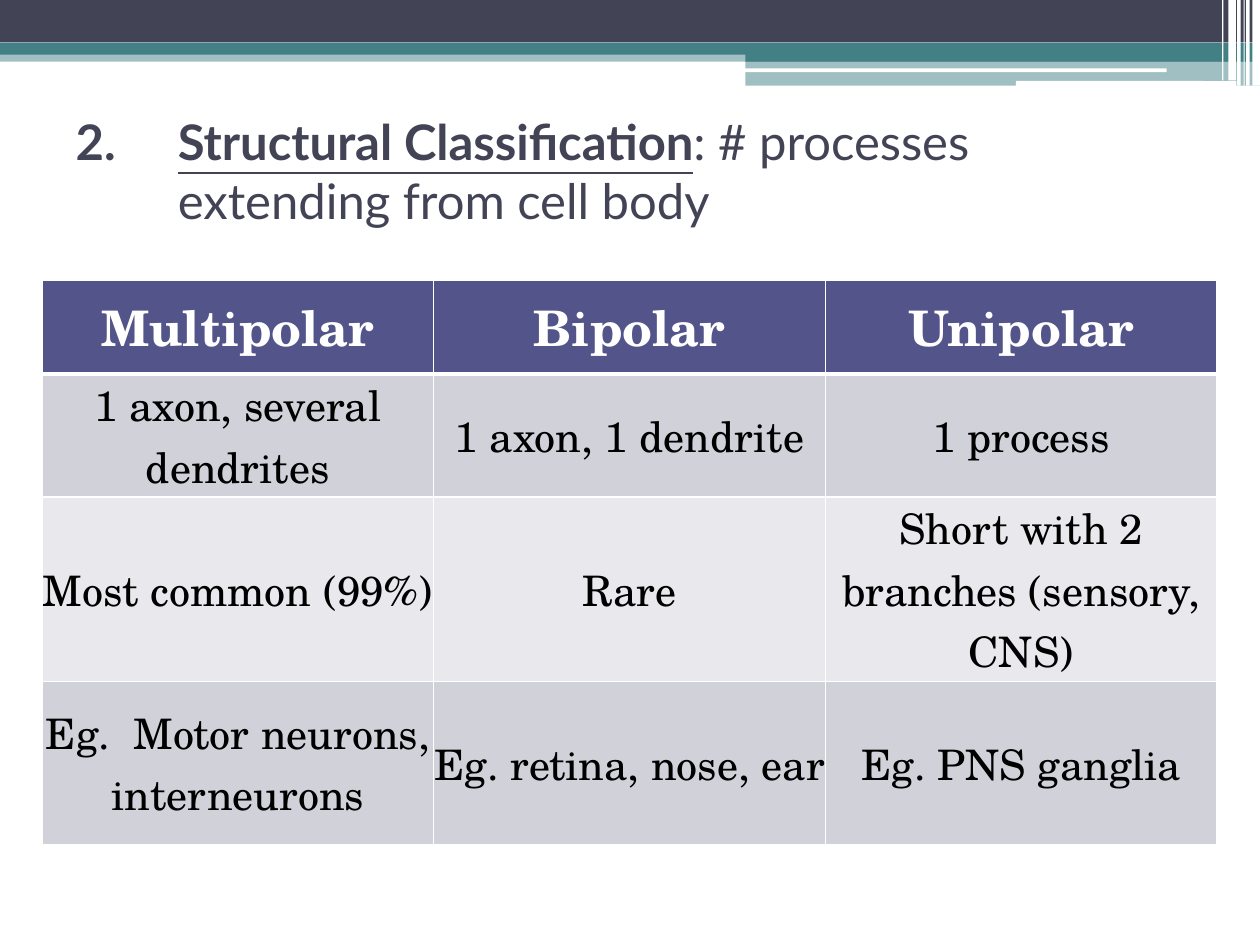
from lxml import etree
from pptx import Presentation
from pptx.dml.color import RGBColor
from pptx.enum.shapes import MSO_SHAPE
from pptx.enum.text import MSO_ANCHOR, MSO_AUTO_SIZE, PP_ALIGN
from pptx.oxml.ns import qn
from pptx.util import Pt

RECT = MSO_SHAPE.RECTANGLE
ROUNDED = MSO_SHAPE.ROUNDED_RECTANGLE
MIDDLE = MSO_ANCHOR.MIDDLE
NO_AUTOFIT = MSO_AUTO_SIZE.NONE
LEFT, CENTER = PP_ALIGN.LEFT, PP_ALIGN.CENTER

TITLE_ONLY = 5
NAVY, TEAL, WHITE, BLACK = "424456", "438086", "FFFFFF", "000000"
HEADER_FILL, DARK_BAND, LIGHT_BAND = "53548A", "D1D1DA", "E9E9ED"


def add_solid(parent, color, alpha=None):
    """Append a solid fill to an XML element, or set alpha percent on an existing one."""
    fill = etree.SubElement(parent, qn("a:solidFill"))
    etree.SubElement(fill, qn("a:srgbClr"), val=color)


def style_run(run, font_name, size, color, bold):
    run.font.name = font_name
    run.font.size = Pt(size)
    run.font.color.rgb = RGBColor.from_string(color)
    run.font.bold = bold


prs = Presentation()
prs.slide_width, prs.slide_height = Pt(720), Pt(540)
slide = prs.slides.add_slide(prs.slide_layouts[TITLE_ONLY])
title = slide.shapes.title

# Header bands and white cut-outs: preset, left, top, width, height, colour, opacity
bands = [
    (RECT, 0, 28.5, 720, 6.8, TEAL, 50),
    (RECT, 0, 0, 720, 24.3, NAVY, 100),
    (RECT, 0, 24.3, 720, 7, TEAL, 100),
    (RECT, 426, 28, 294, 7.2, TEAL, 100),
    (RECT, 426, 35, 294, 14, TEAL, 50),
    (ROUNDED, 425.5, 39.1, 241.2, 2.2, WHITE, 100),
    (ROUNDED, 580.5, 46.3, 126, 2.8, WHITE, 100),
]
stripes = [(715.7, 4.3, 49), (712.1, 2, 49), (710.6, 0.7, 49),
           (707, 2, 49), (702, 4.3, 46), (698.4, 0.7, 46)]
bands += [(RECT, left, 0, width, height, WHITE, 100) for left, width, height in stripes]

for preset, left, top, width, height, color, opacity in bands:
    band = slide.shapes.add_shape(preset, Pt(left), Pt(top), Pt(width), Pt(height))
    band.shadow.inherit = False
    band.line.fill.background()
    band.fill.solid()
    band.fill.fore_color.rgb = RGBColor.from_string(color)
    if opacity < 100:
        srgb = band.fill._xPr.find(".//" + qn("a:srgbClr"))
        etree.SubElement(srgb, qn("a:alpha"), val=str(opacity * 1000))

# Numbered title, in front of the bands
slide.shapes._spTree.append(title._element)
title.left, title.top, title.width, title.height = Pt(36), Pt(72), Pt(648), Pt(84.4)
heading = title.text_frame
heading.word_wrap = True
heading.auto_size = NO_AUTOFIT
heading.vertical_anchor = MIDDLE
point = heading.paragraphs[0]
point.alignment = LEFT
for text, emphasized in [("Structural Classification", True),
                         (": # processes extending from cell body", False)]:
    run = point.add_run()
    run.text = text
    style_run(run, "Lato", 28, NAVY, emphasized)
    run.font.underline = emphasized
point.add_line_break()
line_break = point._p.find(qn("a:br"))
etree.SubElement(line_break, qn("a:rPr"), sz="2800")
numbering = point._p.get_or_add_pPr()
numbering.set("marL", str(Pt(58.5)))
numbering.set("indent", str(Pt(-58.5)))
number_color = etree.SubElement(numbering, qn("a:buClr"))
etree.SubElement(number_color, qn("a:srgbClr"), val=NAVY)
etree.SubElement(numbering, qn("a:buFont"), typeface="+mj-lt")
etree.SubElement(numbering, qn("a:buAutoNum"), type="arabicPeriod", startAt="2")

# Neuron types
neuron_rows = [
    ["Multipolar", "Bipolar", "Unipolar"],
    ["1 axon, several dendrites", "1 axon, 1 dendrite", "1 process"],
    ["Most common (99%)", "Rare", "Short with 2 branches (sensory, CNS)"],
    ["Eg.  Motor neurons, interneurons", "Eg. retina, nose, ear", "Eg. PNS ganglia"],
]
row_heights = [53.7, 65, 93.3, 93.3]
row_fills = [HEADER_FILL, DARK_BAND, LIGHT_BAND, DARK_BAND]
column_width = 223.8
table = slide.shapes.add_table(4, 3, Pt(24), Pt(160), Pt(3 * column_width),
                               Pt(sum(row_heights))).table
for column in table.columns:
    column.width = Pt(column_width)

for r, texts in enumerate(neuron_rows):
    table.rows[r].height = Pt(row_heights[r])
    is_header = r == 0
    border_widths = {"a:lnL": 1, "a:lnR": 1,
                     "a:lnT": 3 if r == 1 else 1, "a:lnB": 3 if is_header else 1}
    for c, text in enumerate(texts):
        cell = table.cell(r, c)
        cell.margin_left = cell.margin_right = cell.margin_top = cell.margin_bottom = 0
        cell.vertical_anchor = MIDDLE
        for side, width in border_widths.items():
            border = etree.SubElement(cell._tc.get_or_add_tcPr(), qn(side), w=str(Pt(width)))
            add_solid(border, WHITE)
        cell.fill.solid()
        cell.fill.fore_color.rgb = RGBColor.from_string(row_fills[r])
        entry = cell.text_frame.paragraphs[0]
        entry.text = text
        entry.alignment = CENTER
        style_run(entry.runs[0], "TeX Gyre Schola", 28 if is_header else 24,
                  WHITE if is_header else BLACK, is_header)

prs.save("out.pptx")
